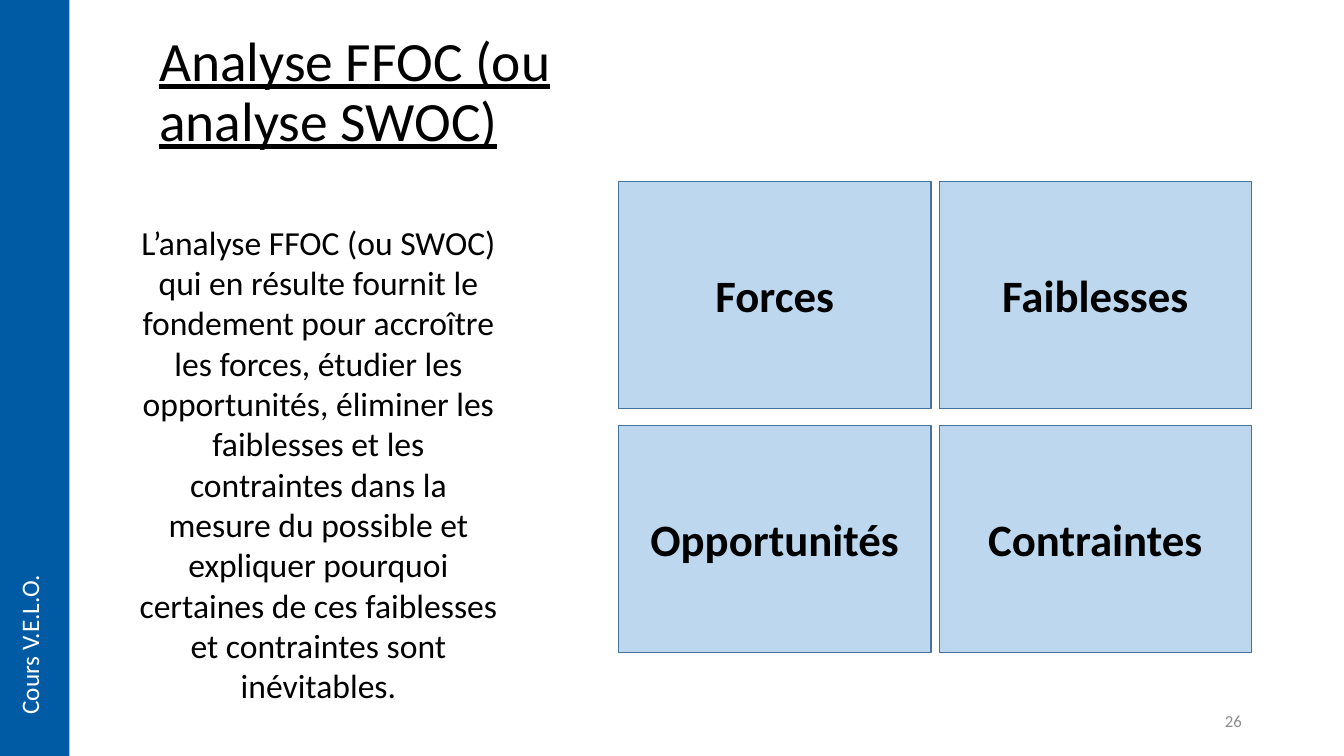
from dataclasses import dataclass

from pptx import Presentation
from pptx import util as u
from pptx.dml import color
from pptx.enum import shapes, text


@dataclass(frozen=True)
class Theme:
    """Colours, type sizes and font of the slide."""
    font: str = "Calibri"
    ink: str = "000000"
    white: str = "FFFFFF"
    grey: str = "8C8C8C"
    band: str = "005BA4"
    cell: str = "BDD7EE"
    edge: str = "43739E"
    title: float = 39.6
    label: float = 32
    body: float = 24
    side: float = 18
    number: float = 12


T = Theme()
ALIGN = text.PP_ALIGN
ANCHOR = text.MSO_ANCHOR
BODY = (
    "L’analyse FFOC (ou SWOC) qui en résulte fournit le fondement pour "
    "accroître les forces, étudier les opportunités, éliminer les faiblesses "
    "et les contraintes dans la mesure du possible et expliquer pourquoi "
    "certaines de ces faiblesses et contraintes sont inévitables."
)
QUADRANTS = (("Forces", "Faiblesses"), ("Opportunités", "Contraintes"))


def rgb(value):
    """Turn a hex string into a colour."""
    return color.RGBColor.from_string(value)


def cm(*values):
    """Turn numbers into lengths in centimetres."""
    return [u.Cm(v) for v in values]


def write(tf, words, size, ink=T.ink, align=ALIGN.LEFT, anchor=ANCHOR.TOP,
          bold=False, underline=False):
    """Write one formatted run into a text frame."""
    tf.word_wrap = True
    tf.auto_size = text.MSO_AUTO_SIZE.NONE
    tf.vertical_anchor = anchor
    p = tf.paragraphs[0]
    p.alignment = align
    r = p.add_run()
    r.text = words
    r.font.name = T.font
    r.font.size = u.Pt(size)
    r.font.bold = bold
    r.font.underline = underline
    r.font.color.rgb = rgb(ink)
    return p


def add_title(s, words, box):
    """Place and format the title placeholder."""
    sp = s.shapes.title
    sp.left, sp.top, sp.width, sp.height = cm(*box)
    p = write(sp.text_frame, words, T.title, anchor=ANCHOR.MIDDLE, underline=True)
    p.line_spacing = 0.9


def add_text(s, words, box, size, **style):
    """Add a text box and return its text frame."""
    tf = s.shapes.add_textbox(*cm(*box)).text_frame
    write(tf, words, size, **style)
    return tf


def add_rect(s, box, fill, line=None):
    """Add a flat rectangle with an optional outline."""
    sp = s.shapes.add_shape(shapes.MSO_SHAPE.RECTANGLE, *cm(*box))
    sp.shadow.inherit = False
    sp.fill.solid()
    sp.fill.fore_color.rgb = rgb(fill)
    if line:
        sp.line.color.rgb = rgb(line)
        sp.line.width = u.Pt(1)
    else:
        sp.line.fill.background()
    return sp


def add_matrix(s, rows, left, top, width, height, gap_x, gap_y):
    """Add the grid of labelled quadrants."""
    for i, row in enumerate(rows):
        for j, label in enumerate(row):
            box = (left + j * (width + gap_x), top + i * (height + gap_y), width, height)
            sp = add_rect(s, box, T.cell, T.edge)
            write(sp.text_frame, label, T.label, align=ALIGN.CENTER,
                  anchor=ANCHOR.MIDDLE, bold=True)


def add_side_band(s, words):
    """Add the left band with its upward course name."""
    add_rect(s, (0, 0, 1.75, 19.05), T.band)
    tf = add_text(s, words, (0.23, 14.25, 1.27, 4.01), T.side, ink=T.white)
    tf.word_wrap = False
    tf._txBody.bodyPr.set("vert", "vert270")


def main():
    """Build the slide and save it."""
    prs = Presentation()
    prs.slide_width, prs.slide_height = cm(33.87, 19.05)
    s = prs.slides.add_slide(prs.slide_layouts[5])
    add_title(s, "Analyse FFOC (ou analyse SWOC)", (3.76, 0.94, 11.96, 2.82))
    add_text(s, "26", (23.93, 17.65, 7.62, 1.02), T.number, ink=T.grey,
             align=ALIGN.RIGHT, anchor=ANCHOR.MIDDLE)
    add_matrix(s, QUADRANTS, 15.59, 4.57, 7.87, 5.72, 0.21, 0.43)
    add_text(s, BODY, (3.2, 5.46, 9.65, 10.52), T.body, align=ALIGN.CENTER)
    add_side_band(s, "Cours V.E.L.O.")
    prs.save("out.pptx")


if __name__ == "__main__":
    main()
